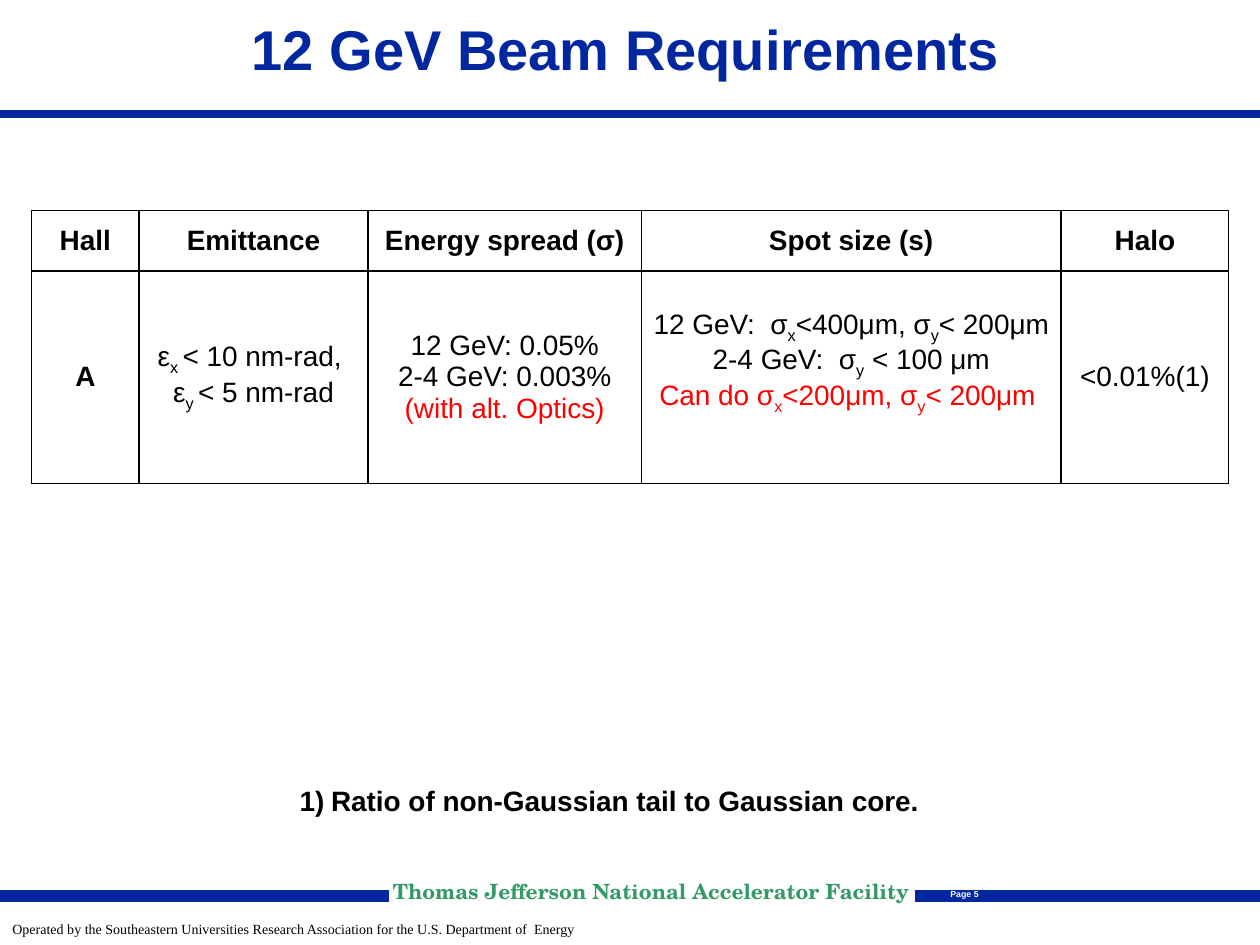
import pptx
import pptx.util
import pptx.dml.color
import pptx.enum.shapes
import pptx.enum.text
import pptx.oxml.ns
from lxml import etree

Cm, Pt = pptx.util.Cm, pptx.util.Pt
RGBColor = pptx.dml.color.RGBColor
ALIGN = pptx.enum.text.PP_ALIGN
MIDDLE = pptx.enum.text.MSO_ANCHOR.MIDDLE
qn = pptx.oxml.ns.qn

BLUE = RGBColor(0x00, 0x27, 0x9F)
GREEN = RGBColor(0x33, 0x99, 0x66)
RED = RGBColor(0xFF, 0x00, 0x00)
BLACK = RGBColor(0x00, 0x00, 0x00)
WHITE = RGBColor(0xFF, 0xFF, 0xFF)

TITLE = "12 GeV Beam Requirements"
HEADERS = ["Hall", "Emittance", "Energy spread (σ)", "Spot size (s)", "Halo"]
# Text between underscores is subscript; each cell is a list of (line, colour).
HALL_A = [
    [("A", BLACK)],
    [("ε_x _< 10 nm-rad, ", BLACK), ("ε_y _< 5 nm-rad", BLACK)],
    [("12 GeV: 0.05%", BLACK), ("2-4 GeV: 0.003%", BLACK), ("(with alt. Optics)", RED)],
    [("12 GeV:  σ_x_<400μm, σ_y_< 200μm", BLACK),
     ("2-4 GeV:  σ_y_ < 100 μm", BLACK),
     ("Can do σ_x_<200μm, σ_y_< 200μm ", RED)],
    [("<0.01%(1)", BLACK)],
]
ROWS = [[[(header, BLACK)] for header in HEADERS], HALL_A]
COLUMN_WIDTHS = [2.16, 4.62, 5.51, 8.46, 3.38]
ROW_HEIGHTS = [1.22, 4.29]
SPOT_SIZE_BOTTOM_MARGIN = 0.6

NOTE = "Ratio of non-Gaussian tail to Gaussian core."
OPERATOR = ("Operated by the Southeastern Universities Research Association "
            "for the U.S. Department of  Energy")
FACILITY = " Thomas Jefferson National Accelerator Facility"

# start x, end x, y, width in points
RULES = [(0, 25.4, 2.29, 4.5), (18.44, 25.4, 18.06, 7.25), (0, 7.85, 18.06, 7.25)]

# text, box, margins (left/right, top/bottom), wrap, paragraph format, font format
FOOTERS = [
    (OPERATOR, (0, 18.54, 11.86, 0.46), (0.25, 0.13), True,
     {"line_spacing": 0.6}, {"name": "Times New Roman", "size": Pt(8), "bold": False}, BLACK),
    (FACILITY, (7.8, 17.81, 10.69, 0.48), (0, 0), True,
     {"line_spacing": 0.8}, {"name": "TeX Gyre Schola", "size": Pt(12), "bold": True}, GREEN),
    ("Page 5", (18.85, 17.81, 1.19, 0.46), (0.25, 0.13), False,
     {"alignment": ALIGN.CENTER}, {"name": "Arial", "size": Pt(5), "bold": True}, WHITE),
]


def set_all(target, values):
    for name, value in values.items():
        setattr(target, name, value)


def format_font(font, values, colour):
    set_all(font, values)
    font.color.rgb = colour


def add_text(slide, text, box, margins, wrap, paragraph_format, font_format, colour):
    shape = slide.shapes.add_textbox(*map(Cm, box))
    side, end = map(Cm, margins)
    set_all(shape.text_frame, {"word_wrap": wrap, "margin_left": side, "margin_right": side,
                               "margin_top": end, "margin_bottom": end})
    paragraph = shape.text_frame.paragraphs[0]
    set_all(paragraph, paragraph_format)
    run = paragraph.add_run()
    run.text = text
    format_font(run.font, font_format, colour)
    return paragraph


def add_rule(slide, start, end, y, width):
    connector = slide.shapes.add_connector(
        pptx.enum.shapes.MSO_CONNECTOR.STRAIGHT, Cm(start), Cm(y), Cm(end), Cm(y))
    connector.line.color.rgb = BLUE
    connector.line.width = Pt(width)
    etree.SubElement(connector._element.spPr, qn("a:effectLst"))


def add_borders(cell):
    properties = cell._tc.get_or_add_tcPr()
    for side in ("a:lnL", "a:lnR", "a:lnT", "a:lnB"):
        line = etree.SubElement(properties, qn(side), w=str(Pt(1)))
        fill = etree.SubElement(line, qn("a:solidFill"))
        etree.SubElement(fill, qn("a:srgbClr"), val=str(BLACK))


def fill_cell(cell, lines, bold):
    add_borders(cell)
    cell.fill.background()
    set_all(cell, {"vertical_anchor": MIDDLE, "margin_left": Cm(0.18), "margin_right": Cm(0.18),
                   "margin_top": 0, "margin_bottom": 0})
    for index, (text, colour) in enumerate(lines):
        paragraph = cell.text_frame.paragraphs[0] if index == 0 else cell.text_frame.add_paragraph()
        paragraph.alignment = ALIGN.CENTER
        for part, piece in enumerate(text.split("_")):
            run = paragraph.add_run()
            run.text = piece
            format_font(run.font, {"name": "Arial", "size": Pt(16), "bold": bold}, colour)
            if part % 2:
                run.font._element.set("baseline", "-25000")


def add_requirements(slide):
    table = slide.shapes.add_table(
        len(ROWS), len(HEADERS), Cm(0.64), Cm(4.24),
        Cm(sum(COLUMN_WIDTHS)), Cm(sum(ROW_HEIGHTS))).table
    set_all(table, {"first_row": False, "horz_banding": False})
    for column, width in zip(table.columns, COLUMN_WIDTHS):
        column.width = Cm(width)
    for r, (row, height) in enumerate(zip(ROWS, ROW_HEIGHTS)):
        table.rows[r].height = Cm(height)
        for c, lines in enumerate(row):
            fill_cell(table.cell(r, c), lines, bold=r == 0 or c == 0)
    table.cell(1, HEADERS.index("Spot size (s)")).margin_bottom = Cm(SPOT_SIZE_BOTTOM_MARGIN)


def add_note(slide):
    paragraph = add_text(slide, NOTE, (2.34, 15.67, 19.89, 0.94), (0.25, 0.13), True,
                         {"alignment": ALIGN.CENTER},
                         {"name": "Arial", "size": Pt(16), "bold": True}, BLACK)
    properties = paragraph._p.get_or_add_pPr()
    indent = Pt(18)
    properties.set("marL", str(indent))
    properties.set("indent", str(-indent))
    etree.SubElement(properties, qn("a:buAutoNum"), type="arabicParenR")


def format_title(title):
    set_all(title, dict(zip(("left", "top", "width", "height"),
                            map(Cm, (0.46, 0.05, 24.31, 2.06)))))
    title.text_frame.text = TITLE
    title.text_frame.vertical_anchor = MIDDLE
    paragraph = title.text_frame.paragraphs[0]
    set_all(paragraph, {"alignment": ALIGN.CENTER, "line_spacing": 0.85})
    format_font(paragraph.runs[0].font, {"name": "Arial", "size": Pt(32), "bold": True}, BLUE)


def main():
    presentation = pptx.Presentation()
    set_all(presentation, {"slide_width": Cm(25.4), "slide_height": Cm(19.05)})
    slide = presentation.slides.add_slide(presentation.slide_layouts[5])
    format_title(slide.shapes.title)
    for rule in RULES:
        add_rule(slide, *rule)
    for footer in FOOTERS:
        add_text(slide, *footer)
    add_requirements(slide)
    add_note(slide)
    presentation.save("out.pptx")


if __name__ == "__main__":
    main()
